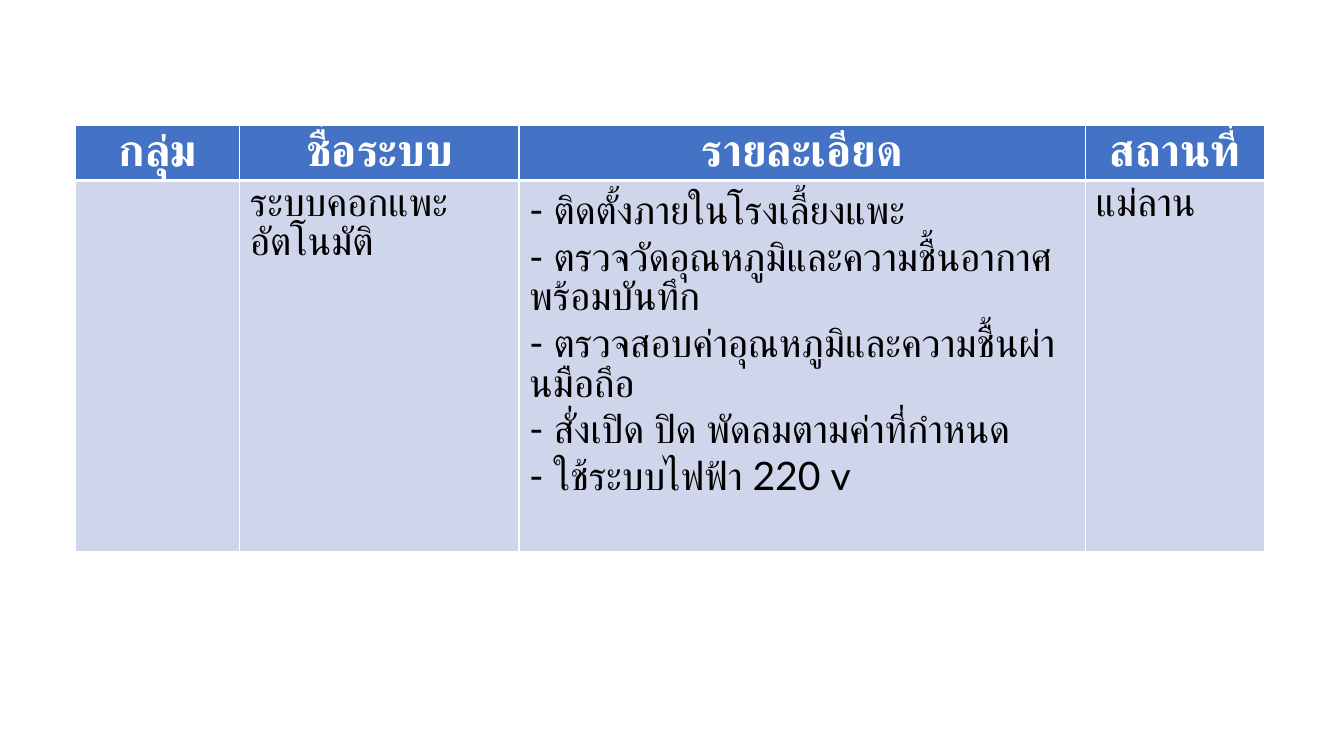
from typing import NamedTuple

from lxml import etree
from pptx import Presentation
from pptx.dml.color import RGBColor
from pptx.enum.text import PP_ALIGN
from pptx.oxml.ns import qn
from pptx.table import _Cell
from pptx.util import Pt

CENTER, LEFT = PP_ALIGN.CENTER, PP_ALIGN.LEFT
FONT = "Lato"
WHITE, BLACK, BLUE, PALE = "FFFFFF", "000000", "4472C4", "CFD5EA"
HEAD_H, BODY_H = 38.6, 265


class Column(NamedTuple):
    title: str
    width: float
    lines: list[str]


COLUMNS = [
    Column("กลุ่ม", 117.36, []),
    Column("ชื่อระบบ", 199.44, ["ระบบคอกแพะอัตโนมัติ"]),
    Column("รายละเอียด", 404.64, [
        "- ติดตั้งภายในโรงเลี้ยงแพะ",
        "- ตรวจวัดอุณหภูมิและความชื้นอากาศพร้อมบันทึก",
        "- ตรวจสอบค่าอุณหภูมิและความชื้นผ่านมือถึอ",
        "- สั่งเปิด ปิด พัดลมตามค่าที่กำหนด",
        "- ใช้ระบบไฟฟ้า 220 v",
    ]),
    Column("สถานที่", 128.16, ["แม่ลาน"]),
]


def color(code: str) -> RGBColor:
    return RGBColor.from_string(code)


def write(cell: _Cell, lines: list[str], *, size: float, ink: str,
          bold: bool = False, align: PP_ALIGN = LEFT) -> None:
    frame = cell.text_frame
    for i, line in enumerate(lines):
        para = frame.add_paragraph() if i else frame.paragraphs[0]
        para.alignment = align
        run = para.add_run()
        run.text = line
        font = run.font
        font.name, font.size, font.bold = FONT, Pt(size), bold
        font.color.rgb = color(ink)


def paint(cell: _Cell, fill: str, top: float, bottom: float) -> None:
    """Fill a cell and draw its white borders; widths in points."""
    props = cell._tc.get_or_add_tcPr()
    for side, width in (("L", 1), ("R", 1), ("T", top), ("B", bottom)):
        line = etree.SubElement(props, qn(f"a:ln{side}"), w=str(Pt(width)))
        solid = etree.SubElement(line, qn("a:solidFill"))
        etree.SubElement(solid, qn("a:srgbClr"), val=WHITE)
    cell.fill.solid()
    cell.fill.fore_color.rgb = color(fill)


def main() -> None:
    deck = Presentation()
    deck.slide_width, deck.slide_height = Pt(960), Pt(540)
    slide = deck.slides.add_slide(deck.slide_layouts[6])
    width = sum(col.width for col in COLUMNS)
    table = slide.shapes.add_table(
        2, len(COLUMNS), Pt(54), Pt(89.6), Pt(width), Pt(HEAD_H + BODY_H)).table
    table.rows[0].height, table.rows[1].height = Pt(HEAD_H), Pt(BODY_H)
    for i, col in enumerate(COLUMNS):
        table.columns[i].width = Pt(col.width)
        head, body = table.cell(0, i), table.cell(1, i)
        paint(head, BLUE, top=1, bottom=3)
        paint(body, PALE, top=3, bottom=1)
        write(head, [col.title], size=32, ink=WHITE, bold=True, align=CENTER)
        write(body, col.lines, size=28, ink=BLACK)
    deck.save("out.pptx")


if __name__ == "__main__":
    main()
